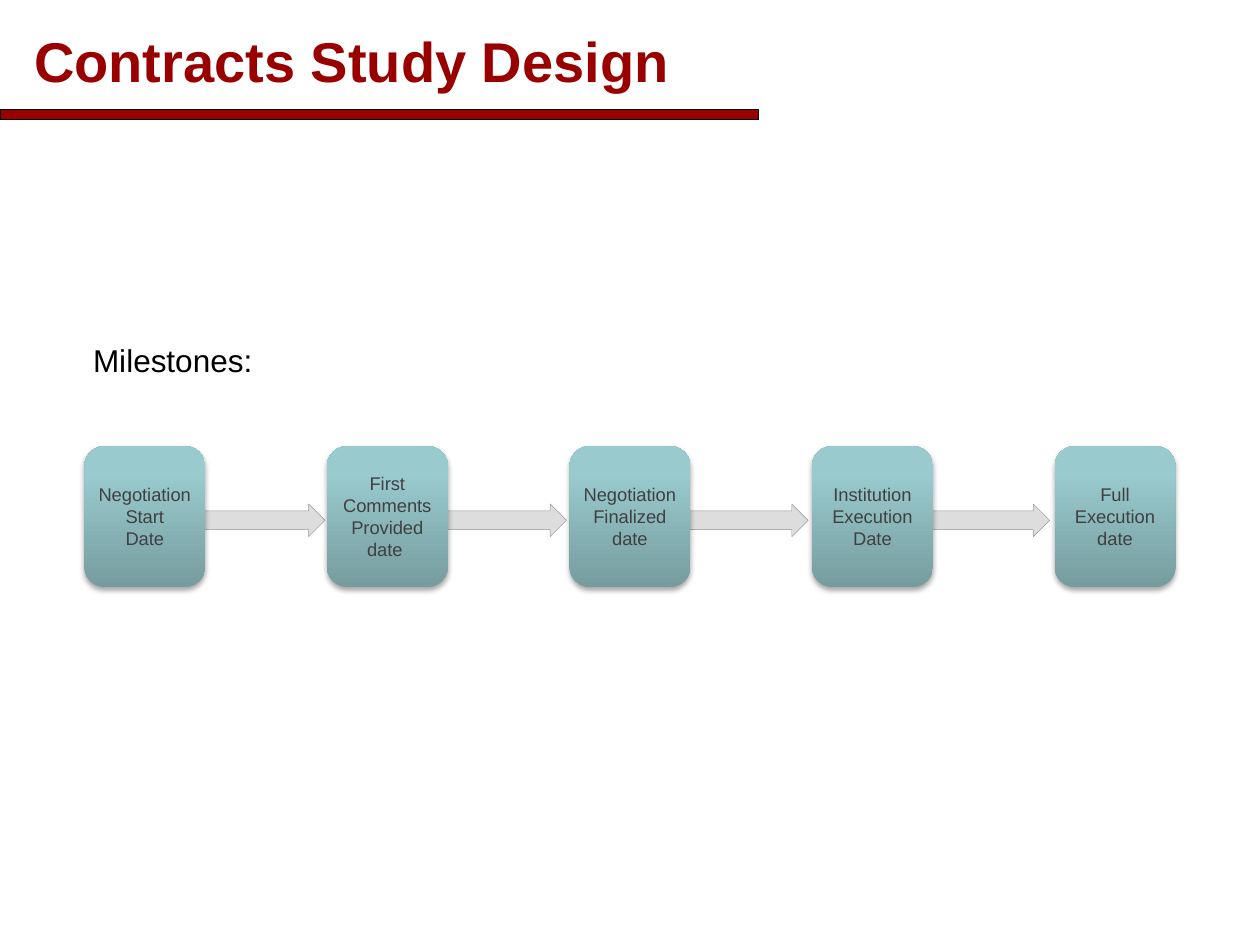
import copy
import dataclasses

import lxml.etree
import pptx
import pptx.dml.color
import pptx.enum.shapes
import pptx.enum.text
import pptx.oxml
import pptx.oxml.ns
import pptx.util
from pptx.util import Inches

SHAPE = pptx.enum.shapes.MSO_SHAPE
ANCHOR = pptx.enum.text.MSO_ANCHOR
ALIGN = pptx.enum.text.PP_ALIGN


@dataclasses.dataclass(frozen=True)
class Theme:
    font: str = "Arial"
    title_size: float = 32
    label_size: float = 18
    box_size: float = 10.5
    accent: str = "990000"
    black: str = "000000"
    box_text: str = "404040"
    arrow_fill: str = "DDDDDD"
    arrow_line: str = "969696"
    box_stops: tuple = ((0, "769C9E"), (0.8, "99CACE"), (1, "98CCD0"))


THEME = Theme()
MILESTONES = [
    "Negotiation\nStart\nDate",
    "First\nComments\nProvided\ndate ",
    "Negotiation\nFinalized\ndate",
    "Institution\nExecution\nDate",
    "Full\nExecution\ndate",
]


def rgb(value):
    return pptx.dml.color.RGBColor.from_string(value)


def write_text(frame, text, size, color, bold=False, align=ALIGN.LEFT):
    frame.text = text
    for para in frame.paragraphs:
        para.alignment = align
        for run in para.runs:
            run.font.name = THEME.font
            run.font.size = pptx.util.Pt(size)
            run.font.bold = bold
            run.font.color.rgb = rgb(color)


def add_solid(page, kind, left, top, width, height, fill, line, line_width):
    shape = page.shapes.add_shape(kind, left, top, width, height)
    shape.shadow.inherit = False
    shape.fill.solid()
    shape.fill.fore_color.rgb = rgb(fill)
    shape.line.color.rgb = rgb(line)
    shape.line.width = pptx.util.Pt(line_width)
    return shape


def add_soft_shadow(shape):
    shape.shadow.inherit = False
    effects = shape._element.spPr.find(pptx.oxml.ns.qn("a:effectLst"))
    effects.append(pptx.oxml.parse_xml(
        f'<a:outerShdw {pptx.oxml.ns.nsdecls("a")} blurRad="{pptx.util.Pt(3.1)}" '
        f'dist="{pptx.util.Pt(1.8)}" dir="5400000" rotWithShape="0">'
        f'<a:srgbClr val="{THEME.black}"><a:alpha val="35000"/></a:srgbClr>'
        '</a:outerShdw>'))


def fill_gradient(shape):
    shape.fill.gradient()
    shape.fill.gradient_angle = 90
    # The preset gradient has two stops; the box needs a third
    stops = shape._element.spPr.find(".//" + pptx.oxml.ns.qn("a:gsLst"))
    stops.append(copy.deepcopy(stops[-1]))
    for stop, (position, color) in zip(shape.fill.gradient_stops, THEME.box_stops):
        stop.position = position
        stop.color.rgb = rgb(color)


def add_header(page, left, top, width):
    # Rule under the title
    add_solid(page, SHAPE.RECTANGLE, left, top + Inches(0.87), Inches(6.02),
              Inches(0.08), THEME.accent, THEME.black, 0.75)
    # Title
    title = page.shapes.title
    title.left, title.top = left + Inches(0.17), top + Inches(0.09)
    title.width, title.height = width - Inches(0.32), Inches(0.77)
    title.text_frame.vertical_anchor = ANCHOR.MIDDLE
    write_text(title.text_frame, "Contracts Study Design", THEME.title_size,
               THEME.accent, bold=True)


def add_milestone(page, left, top, width, height, text):
    box = page.shapes.add_shape(SHAPE.ROUNDED_RECTANGLE, left, top, width, height)
    fill_gradient(box)
    box.line.fill.background()
    add_soft_shadow(box)
    box.text_frame.word_wrap = False
    box.text_frame.vertical_anchor = ANCHOR.MIDDLE
    write_text(box.text_frame, text, THEME.box_size, THEME.box_text,
               align=ALIGN.CENTER)


def add_timeline(page, left, top, width, height):
    box_width = Inches(0.96)
    pitch = (width - box_width) / (len(MILESTONES) - 1)
    # Arrows, behind the boxes
    for index in range(len(MILESTONES) - 1):
        arrow = add_solid(page, SHAPE.RIGHT_ARROW,
                          left + Inches(0.91 + 1.917 * index), top + Inches(0.46),
                          Inches(1), Inches(0.26),
                          THEME.arrow_fill, THEME.arrow_line, 0.25)
        arrow.adjustments[0] = 0.57
        arrow.adjustments[1] = 0.5
    # Milestone boxes
    for index, text in enumerate(MILESTONES):
        add_milestone(page, left + int(index * pitch), top, box_width, height, text)


def add_label(page, left, top, width, height):
    label = page.shapes.add_textbox(left, top, width, height)
    label.text_frame.word_wrap = False
    label.text_frame.auto_size = pptx.enum.text.MSO_AUTO_SIZE.SHAPE_TO_FIT_TEXT
    write_text(label.text_frame, "Milestones:", THEME.label_size, THEME.black)


def main():
    deck = pptx.Presentation()
    deck.slide_width, deck.slide_height = Inches(10), Inches(7.5)
    page = deck.slides.add_slide(deck.slide_layouts[5])
    add_header(page, 0, 0, deck.slide_width)
    add_timeline(page, Inches(0.67), Inches(3.54), Inches(8.66), Inches(1.12))
    add_label(page, Inches(0.64), Inches(2.66), Inches(1.48), Inches(0.4))
    deck.save("out.pptx")


if __name__ == "__main__":
    main()
